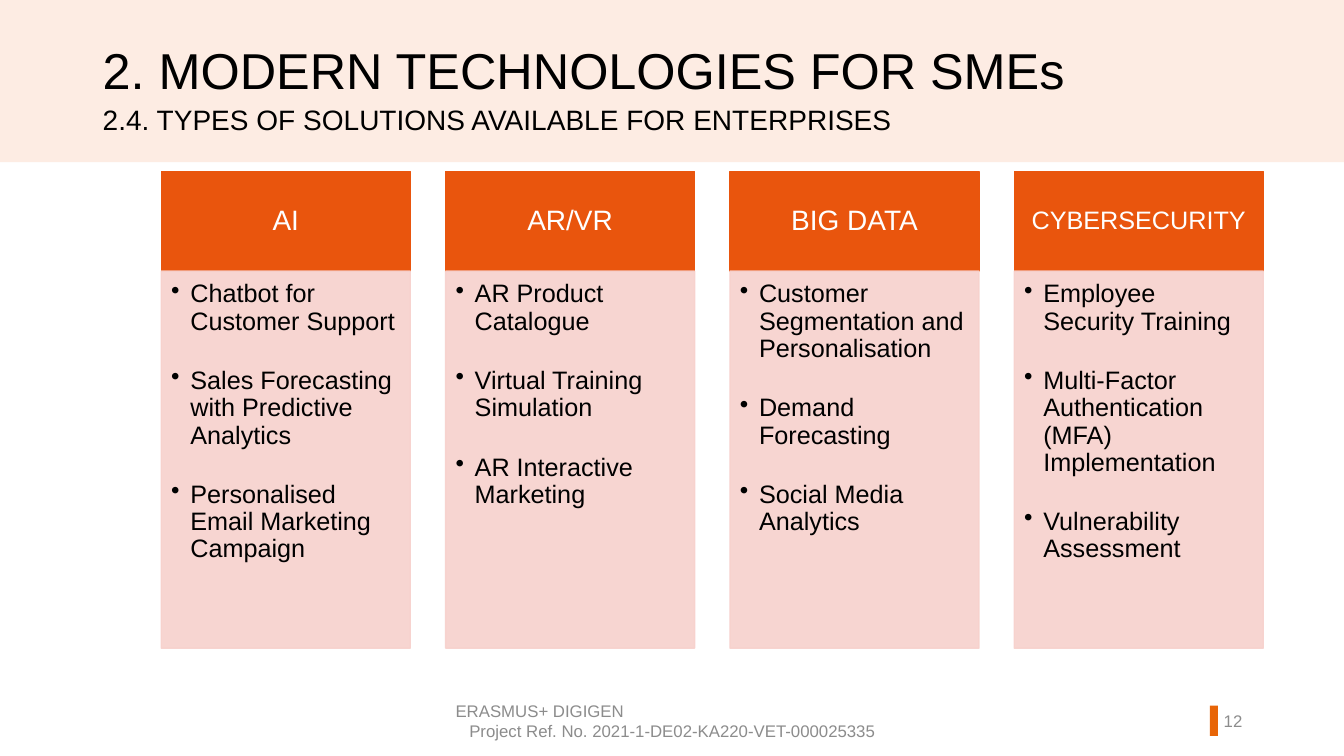
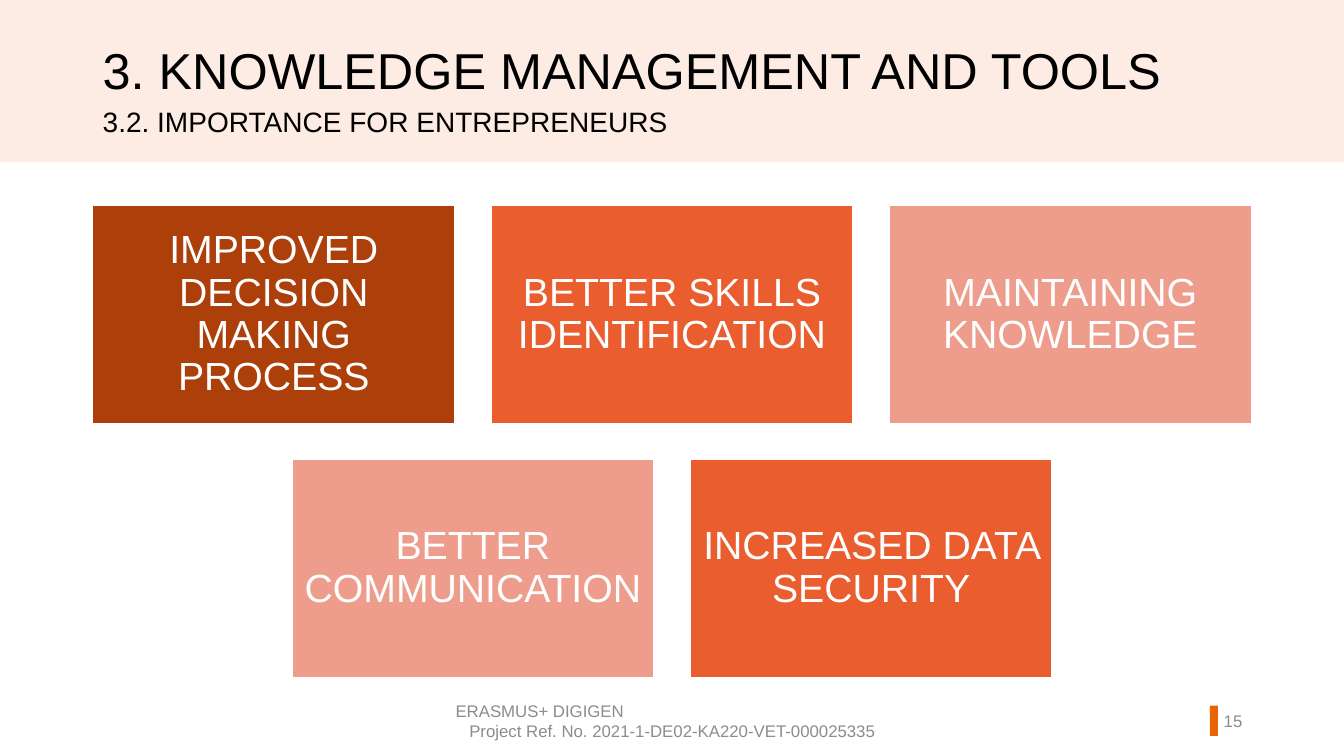
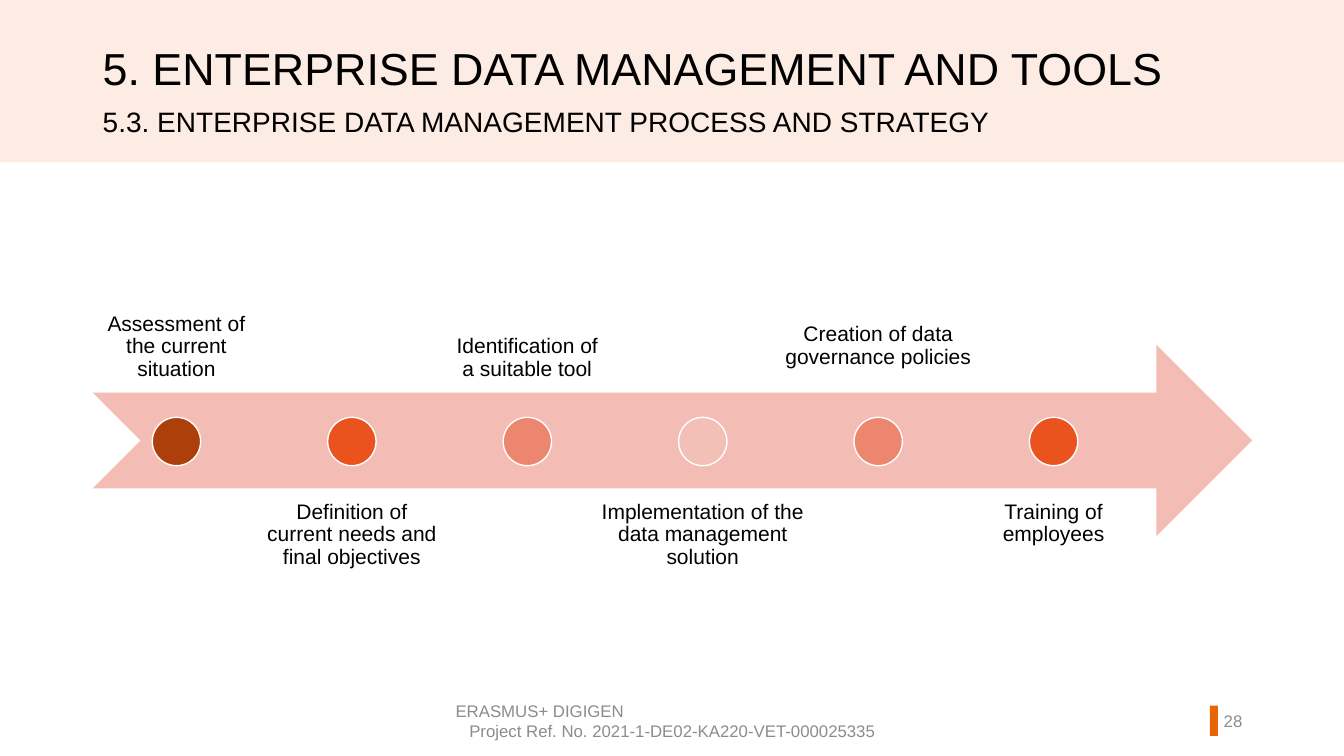
"""Build three slides on technology, knowledge and data management for small firms."""
from lxml import etree
from pptx import Presentation
from pptx.dml.color import RGBColor
from pptx.enum.shapes import MSO_SHAPE
from pptx.enum.text import MSO_ANCHOR, PP_ALIGN
from pptx.oxml.ns import qn
from pptx.util import Inches, Pt

RECTANGLE, OVAL, ARROW = MSO_SHAPE.RECTANGLE, MSO_SHAPE.OVAL, MSO_SHAPE.NOTCHED_RIGHT_ARROW
TOP, MIDDLE, BOTTOM = MSO_ANCHOR.TOP, MSO_ANCHOR.MIDDLE, MSO_ANCHOR.BOTTOM
LEFT, CENTER, RIGHT = PP_ALIGN.LEFT, PP_ALIGN.CENTER, PP_ALIGN.RIGHT

FONT = "Arial"
COLORS = {
    "black": "000000", "white": "FFFFFF", "gray": "8C8C8C",
    "band": "FDECE3", "bar": "E86507",
    "header": "E9550D", "panel": "F7D1CC",
    "brown": "AC3F0A", "tile": "EA5D2E", "rose": "EE9D8C",
    "arrow": "F3BCB4", "orange": "EA531E", "salmon": "EC866E", "blush": "F3C0B8",
}
SLIDE_WIDTH, SLIDE_HEIGHT = 13.33, 7.5
DEFAULT_INSETS = (0.1, 0.05, 0.1, 0.05)
EVEN_INSETS = (0.12,) * 4

FOOTER = [("ERASMUS+ DIGIGEN", LEFT),
          ("Project Ref. No. 2021-1-DE02-KA220-VET-000025335", CENTER)]

SOLUTIONS = [
    ("AI", 20, ["Chatbot for Customer Support",
                "Sales Forecasting with Predictive Analytics",
                "Personalised Email Marketing Campaign"]),
    ("AR/VR", 20, ["AR Product Catalogue",
                   "Virtual Training Simulation",
                   "AR Interactive Marketing"]),
    ("BIG DATA", 20, ["Customer Segmentation and Personalisation",
                      "Demand Forecasting",
                      "Social Media Analytics"]),
    ("CYBERSECURITY", 18, ["Employee Security Training",
                           "Multi-Factor Authentication (MFA) Implementation",
                           "Vulnerability Assessment"]),
]

BENEFIT_ROWS = [
    [("IMPROVED DECISION MAKING PROCESS", "brown"),
     ("BETTER SKILLS IDENTIFICATION", "tile"),
     ("MAINTAINING KNOWLEDGE", "rose")],
    [("BETTER COMMUNICATION", "rose"),
     ("INCREASED DATA SECURITY", "tile")],
]

# label, label width, label top, marker colour
STEPS = [
    ("Assessment of the current situation", 1.66, 2, "brown"),
    ("Definition of current needs and final objectives", 1.97, 4.85, "orange"),
    ("Identification of a suitable tool", 1.66, 2, "salmon"),
    ("Implementation of the data management solution", 2.33, 4.85, "blush"),
    ("Creation of data governance policies", 2.11, 1.88, "salmon"),
    ("Training of employees", 1.66, 4.85, "orange"),
]


def rgb(name):
    return RGBColor.from_string(COLORS[name])


def add_shape(page, kind, area, fill, line=None, opacity=None):
    shape = page.shapes.add_shape(kind, *map(Inches, area))
    shape.shadow.inherit = False
    shape.fill.solid()
    shape.fill.fore_color.rgb = rgb(fill)
    if line:
        shape.line.color.rgb = rgb(line)
        shape.line.width = Pt(1)
    else:
        shape.line.fill.background()
    if opacity:
        for color in shape._element.spPr.iter(qn("a:srgbClr")):
            etree.SubElement(color, qn("a:alpha"), val=str(opacity * 1000))
    return shape


def add_box(page, area):
    return page.shapes.add_textbox(*map(Inches, area))


def add_bullet(paragraph):
    properties = paragraph._p.get_or_add_pPr()
    properties.set("marL", str(Inches(0.19)))
    properties.set("indent", str(Inches(-0.19)))
    etree.SubElement(properties, qn("a:buChar"), char="•")


def write(box, lines, size, color="black", anchor=TOP, align=LEFT,
          insets=DEFAULT_INSETS, spacing=0.9, gap=0, bullets=False):
    frame = box.text_frame
    frame.word_wrap = True
    frame.vertical_anchor = anchor
    for side, inset in zip(("left", "top", "right", "bottom"), insets):
        setattr(frame, f"margin_{side}", Inches(inset))
    for index, line in enumerate(lines):
        text, line_align = line if isinstance(line, tuple) else (line, align)
        paragraph = frame.paragraphs[0] if index == 0 else frame.add_paragraph()
        if bullets:
            add_bullet(paragraph)
        layout = {"alignment": line_align, "line_spacing": spacing,
                  "space_before": Pt(gap if index else 0)}
        for name, value in layout.items():
            setattr(paragraph, name, value)
        span = paragraph.add_run()
        span.text = text
        span.font.color.rgb = rgb(color)
        for name, value in {"name": FONT, "size": Pt(size)}.items():
            setattr(span.font, name, value)


def add_page(deck, number, title, subtitle, title_size=36, subtitle_top=1.03):
    page = deck.slides.add_slide(deck.slide_layouts[6])
    add_shape(page, RECTANGLE, (0, 0, SLIDE_WIDTH, 1.61), "band")
    add_shape(page, RECTANGLE, (12, 7, 0.08, 0.3), "bar")
    write(add_box(page, (4.42, 6.95, 4.5, 0.4)), FOOTER, 12, "gray", MIDDLE, spacing=1)
    write(add_box(page, (11.77, 6.95, 0.65, 0.4)), [str(number)], 12, "gray",
          MIDDLE, RIGHT, spacing=1)
    write(add_box(page, (0.92, 0.41, 10.88, 0.85)), [title], title_size)
    write(add_box(page, (0.92, subtitle_top, 10.85, 0.85)), [subtitle], 20)
    return page


def add_solutions(page):
    left, top, width, pitch = 1.6, 1.7, 2.47, 2.82
    header_height, panel_height = 0.99, 3.74
    for index, (name, size, items) in enumerate(SOLUTIONS):
        x = left + index * pitch
        header = add_shape(page, RECTANGLE, (x, top, width, header_height), "header", "header")
        write(header, [name], size, "white", MIDDLE, CENTER, (0.14, 0.08, 0.14, 0.08))
        panel = add_shape(page, RECTANGLE, (x, top + header_height, width, panel_height),
                          "panel", "panel", opacity=90)
        write(panel, items, 18, insets=(0.1, 0.1, 0.14, 0.16), gap=23, bullets=True)


def add_benefits(page):
    top, width, height, gap = 2.04, 3.59, 2.16, 0.36
    for row, tiles in enumerate(BENEFIT_ROWS):
        left = (SLIDE_WIDTH - len(tiles) * (width + gap) + gap) / 2
        for column, (text, fill) in enumerate(tiles):
            area = (left + column * (width + gap), top + row * (height + gap), width, height)
            tile = add_shape(page, RECTANGLE, area, fill, "white")
            write(tile, [text], 28, "white", MIDDLE, CENTER, EVEN_INSETS)


def add_steps(page):
    first_center, pitch, middle, diameter, height = 1.75, 1.74, 4.38, 0.48, 1.9
    add_shape(page, ARROW, (0.92, 3.42, 11.5, height), "arrow")
    for index, (text, width, top, fill) in enumerate(STEPS):
        center = first_center + index * pitch
        anchor = BOTTOM if top < middle else TOP
        label = add_box(page, (center - width / 2, top, width, height))
        write(label, [text], 15, anchor=anchor, align=CENTER, insets=EVEN_INSETS)
        add_shape(page, OVAL, (center - diameter / 2, middle - diameter / 2,
                               diameter, diameter), fill, "white")


def main():
    deck = Presentation()
    deck.slide_width, deck.slide_height = Inches(SLIDE_WIDTH), Inches(SLIDE_HEIGHT)
    add_solutions(add_page(deck, 12, "2. MODERN TECHNOLOGIES FOR SMEs",
                           "2.4. TYPES OF SOLUTIONS AVAILABLE FOR ENTERPRISES",
                           subtitle_top=1.01))
    add_benefits(add_page(deck, 15, "3. KNOWLEDGE MANAGEMENT AND TOOLS",
                          "3.2. IMPORTANCE FOR ENTREPRENEURS"))
    add_steps(add_page(deck, 28, "5. ENTERPRISE DATA MANAGEMENT AND TOOLS",
                       "5.3. ENTERPRISE DATA MANAGEMENT PROCESS AND STRATEGY",
                       title_size=32))
    deck.save("out.pptx")


if __name__ == "__main__":
    main()
